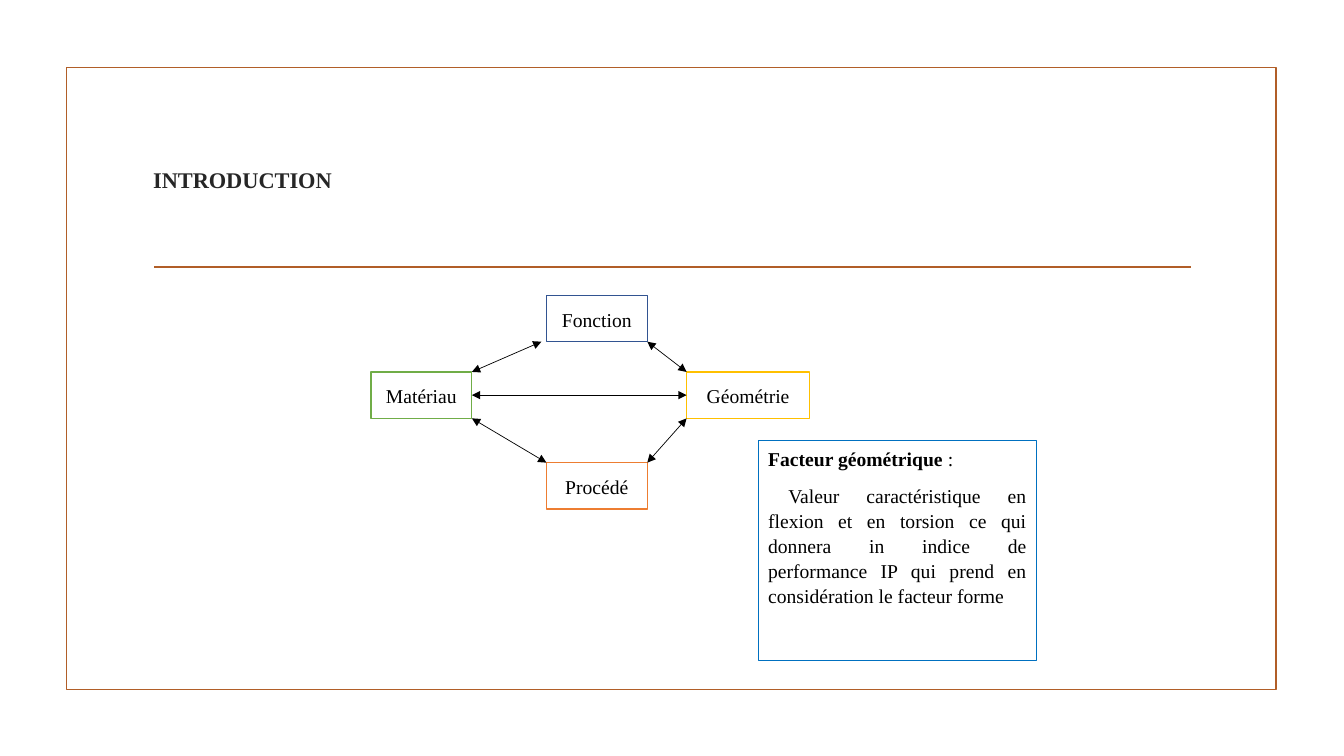
from dataclasses import dataclass

from lxml.etree import SubElement as Sub
from pptx import Presentation
from pptx.dml.color import RGBColor as RGB
from pptx.enum.shapes import MSO_CONNECTOR as CONN, MSO_SHAPE as SHAPE
from pptx.enum.text import MSO_ANCHOR as ANCHOR, PP_ALIGN as ALIGN
from pptx.oxml.ns import qn
from pptx.util import Emu, Pt

PX = 9144  # one hundred px to the inch


@dataclass(frozen=True)
class Theme:
    font: str = "Times New Roman"
    title: int = 16
    body: int = 14
    paper: str = "FFFFFF"
    ink: str = "000000"
    head: str = "262626"
    rust: str = "B15E28"
    blue: str = "0070C0"


THEME = Theme()

# name: (left, top, width, height), line colour
NODES = {
    "Fonction": ((542, 293, 100, 46), "325491"),
    "Matériau": ((368, 369, 100, 46), "70AD47"),
    "Géométrie": ((681, 369, 122, 46), "FFC000"),
    "Procédé": ((542, 459, 100, 46), "ED7D31"),
}

# name, side across and down (0 to 1) at each end, shift of the first end
LINKS = [
    ("Fonction", (0, 1), "Matériau", (1, 0), -5),
    ("Matériau", (1, 1), "Procédé", (0, 0), 0),
    ("Procédé", (1, 0), "Géométrie", (0, 1), 0),
    ("Géométrie", (0, 0), "Fonction", (1, 1), 0),
    ("Matériau", (1, 0.5), "Géométrie", (0, 0.5), 0),
]


def emu(*nums):
    return [Emu(round(n * PX)) for n in nums]


def add_box(slide, area, color, width, fill=THEME.paper):
    box = slide.shapes.add_shape(SHAPE.RECTANGLE, *emu(*area))
    box.shadow.inherit = False
    if fill:
        box.fill.solid()
        box.fill.fore_color.rgb = RGB.from_string(fill)
    else:
        box.fill.background()
    box.line.color.rgb = RGB.from_string(color)
    box.line.width = Pt(width)
    box.text_frame.word_wrap = True
    return box


def add_line(slide, start, end, color, width, arrows=False):
    line = slide.shapes.add_connector(CONN.STRAIGHT, *emu(*start, *end))
    line.line.color.rgb = RGB.from_string(color)
    line.line.width = Pt(width)
    if arrows:
        ln = line.line._get_or_add_ln()
        for tag in ("a:headEnd", "a:tailEnd"):
            Sub(ln, qn(tag), type="triangle")
    Sub(line._element.spPr, qn("a:effectLst"))


def style(para, size, color, bold=False):
    for run in para.runs:
        run.font.name = THEME.font
        run.font.size = Pt(size)
        run.font.bold = bold
        run.font.color.rgb = RGB.from_string(color)


def style_body(para, align):
    para.alignment = align
    para.line_spacing = 1.07
    para.space_after = Pt(8)
    style(para, THEME.body, THEME.ink)


def add_title(slide, text):
    box = slide.shapes.add_textbox(*emu(142, 107, 1050, 143))
    frame = box.text_frame
    frame.word_wrap = True
    frame.vertical_anchor = ANCHOR.MIDDLE
    frame.text = text
    style(frame.paragraphs[0], THEME.title, THEME.head, bold=True)


def add_node(slide, name):
    area, color = NODES[name]
    frame = add_box(slide, area, color, 1).text_frame
    frame.vertical_anchor = ANCHOR.MIDDLE
    frame.text = name
    style_body(frame.paragraphs[0], ALIGN.CENTER)


def node_point(name, side):
    (left, top, width, height), _ = NODES[name]
    return left + side[0] * width, top + side[1] * height


def add_link(slide, first, side, last, end, shift):
    x, y = node_point(first, side)
    add_line(slide, (x + shift, y), node_point(last, end), THEME.ink, 0.5, arrows=True)


def add_note(slide, area, term, text):
    frame = add_box(slide, area, THEME.blue, 0.75).text_frame
    frame.vertical_anchor = ANCHOR.TOP
    frame.text = term
    lead = frame.paragraphs[0]
    lead.add_run().text = " :"
    style_body(lead, ALIGN.LEFT)
    lead.runs[0].font.bold = True
    para = frame.add_paragraph()
    para.text = text
    para._p.get_or_add_pPr().set("indent", str(20 * PX))
    style_body(para, ALIGN.JUSTIFY)


def main():
    deck = Presentation()
    deck.slide_width, deck.slide_height = emu(1333, 750)
    slide = deck.slides.add_slide(deck.slide_layouts[6])
    add_box(slide, (66, 67, 1200, 617), THEME.rust, 1.25, fill=None)
    add_line(slide, (153, 265), (1181, 265), THEME.rust, 1.25)
    add_title(slide, "INTRODUCTION")
    for name in NODES:
        add_node(slide, name)
    for link in LINKS:
        add_link(slide, *link)
    add_note(
        slide,
        (752, 437, 276, 218),
        "Facteur géométrique",
        "Valeur caractéristique en flexion et en torsion ce qui donnera in indice "
        "de performance IP qui prend en considération le facteur forme",
    )
    deck.save("out.pptx")


if __name__ == "__main__":
    main()
